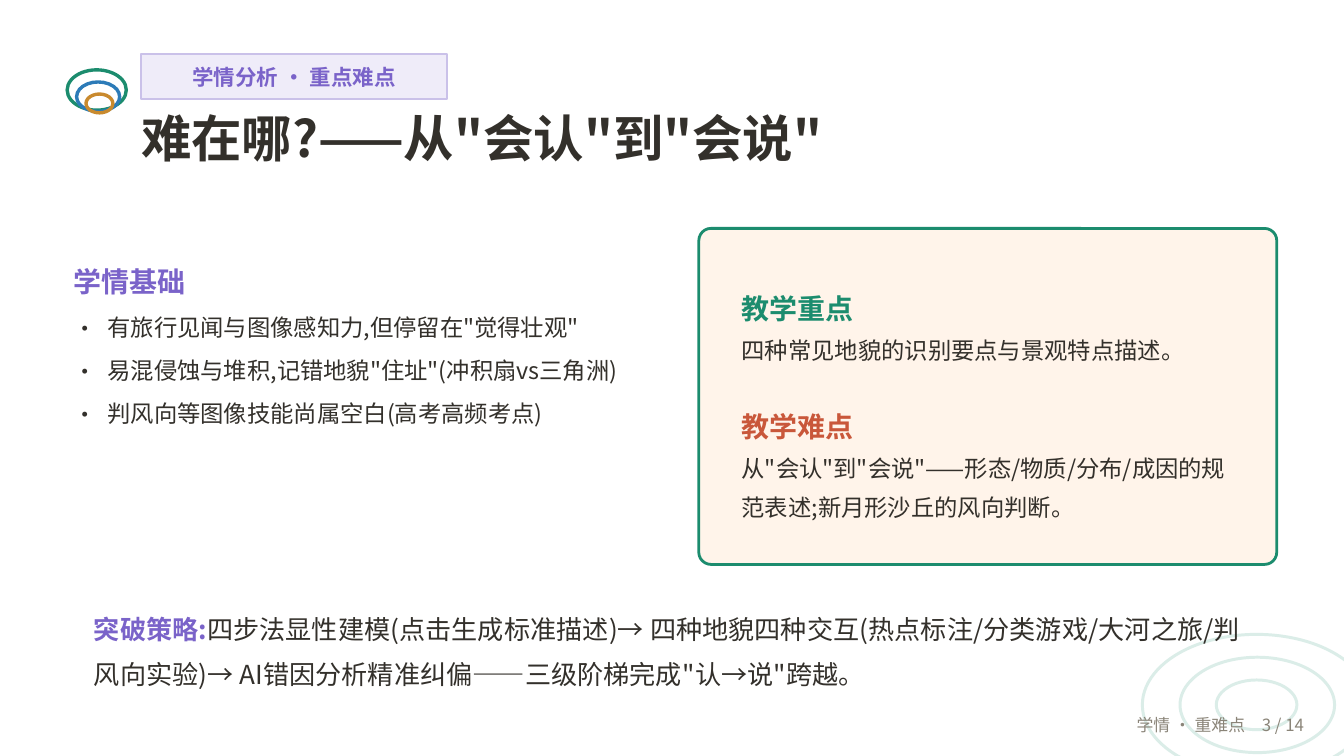
"""Build the lesson slide on learner analysis, key points and difficulties."""
from dataclasses import dataclass

from lxml import etree
from pptx import Presentation
from pptx import util as u
from pptx.dml.color import RGBColor
from pptx.enum import shapes, text
from pptx.oxml.ns import qn

PX = 4572


@dataclass(frozen=True)
class Theme:
    face: str = "Noto Sans CJK SC"
    ink: str = "33302B"
    purple: str = "7A63C9"
    green: str = "1C8C6E"
    red: str = "C9573A"
    blue: str = "2C7BB8"
    amber: str = "C98A2E"
    grey: str = "8A8478"
    mist: str = "DBEDE8"
    lilac: str = "EFECF9"
    lilac_edge: str = "CAC1E9"
    cream: str = "FFF4EA"
    title: float = 27
    heading: float = 15
    strategy: float = 14
    body: float = 12.5
    tag: float = 11.5
    footer: float = 9


theme = Theme()
deck = Presentation()
deck.slide_width, deck.slide_height = 2000 * PX, 1125 * PX
page = deck.slides.add_slide(deck.slide_layouts[6])


def add_figure(kind, place, edge, width, fill=None):
    figure = page.shapes.add_shape(kind, *(n * PX for n in place))
    figure.shadow.inherit = False
    figure.line.color.rgb = RGBColor.from_string(edge)
    figure.line.width = u.Pt(width)
    if fill:
        figure.fill.solid()
        figure.fill.fore_color.rgb = RGBColor.from_string(fill)
    else:
        figure.fill.background()
    return figure


def add_para(box, words, size, color, bold=False, leading=None, bullet=None):
    frame = box.text_frame
    para = frame.add_paragraph() if frame.text else frame.paragraphs[0]
    para.text = words
    if leading:
        para.line_spacing = u.Pt(leading)
    if bullet:
        props = para._p.get_or_add_pPr()
        props.set("marL", str(50 * PX))
        props.set("indent", str(-50 * PX))
        etree.SubElement(props, qn("a:buFont")).set("typeface", theme.face)
        etree.SubElement(props, qn("a:buChar")).set("char", bullet)
    para.font.name = theme.face
    para.font.size = u.Pt(size)
    para.font.bold = bold
    para.font.color.rgb = RGBColor.from_string(color)
    east_asian = etree.SubElement(para._p.pPr.find(qn("a:defRPr")), qn("a:ea"))
    east_asian.set("typeface", theme.face)
    return para


ripples = [(1700, 944, 340, 210), (1756, 978, 230, 142), (1810, 1012, 120, 74)]
for place in ripples:
    add_figure(shapes.MSO_SHAPE.OVAL, place, theme.mist, 1.6)

rings = [
    ((100, 104, 88, 60), theme.green),
    ((114, 122, 64, 44), theme.blue),
    ((128, 140, 40, 28), theme.amber),
]
for place, color in rings:
    add_figure(shapes.MSO_SHAPE.OVAL, place, color, 1.8)

tag = add_figure(shapes.MSO_SHAPE.RECTANGLE, (210, 80, 455, 68), theme.lilac_edge, 1, theme.lilac)
title = page.shapes.add_textbox(210 * PX, 160 * PX, 1680 * PX, 110 * PX)
basis = page.shapes.add_textbox(110 * PX, 380 * PX, 900 * PX, 360 * PX)
card = add_figure(shapes.MSO_SHAPE.ROUNDED_RECTANGLE, (1040, 340, 860, 500), theme.green, 1.5, theme.cream)
card.adjustments[0] = 0.036
focus = page.shapes.add_textbox(1084 * PX, 381 * PX, 784 * PX, 440 * PX)
strategy = page.shapes.add_textbox(120 * PX, 890 * PX, 1770 * PX, 140 * PX)
footer = page.shapes.add_textbox(1600 * PX, 1049 * PX, 360 * PX, 60 * PX)

for box in (tag, title, basis, focus, strategy, footer):
    box.text_frame.word_wrap = True
for box in (tag, title, basis):
    frame = box.text_frame
    frame.margin_left = frame.margin_right = frame.margin_top = frame.margin_bottom = 0
for box in (tag, focus, strategy, footer):
    box.text_frame.vertical_anchor = text.MSO_ANCHOR.MIDDLE

para = add_para(tag, "学情分析 · 重点难点", theme.tag, theme.purple, True)
para.alignment = text.PP_ALIGN.CENTER
add_para(title, '难在哪?——从"会认"到"会说"', theme.title, theme.ink, True)

add_para(basis, "学情基础", theme.heading, theme.purple, True, 23)
for words in (
    '有旅行见闻与图像感知力,但停留在"觉得壮观"',
    '易混侵蚀与堆积,记错地貌"住址"(冲积扇vs三角洲)',
    "判风向等图像技能尚属空白(高考高频考点)",
):
    add_para(basis, words, theme.body, theme.ink, leading=23, bullet="·")

add_para(focus, "教学重点", theme.heading, theme.green, True, 21)
add_para(focus, "四种常见地貌的识别要点与景观特点描述。", theme.body, theme.ink, leading=21)
para = add_para(focus, "教学难点", theme.heading, theme.red, True, 21)
para.space_before = u.Pt(21)
add_para(
    focus,
    '从"会认"到"会说"——形态/物质/分布/成因的规范表述;新月形沙丘的风向判断。',
    theme.body, theme.ink, leading=21,
)

para = add_para(strategy, "突破策略:", theme.strategy, theme.ink, leading=24)
lead = para.runs[0]
lead.font.bold = True
lead.font.color.rgb = RGBColor.from_string(theme.purple)
span = para.add_run()
span.text = (
    "四步法显性建模(点击生成标准描述)→ 四种地貌四种交互(热点标注/分类游戏/大河之旅/判风向实验)"
    '→ AI错因分析精准纠偏——三级阶梯完成"认→说"跨越。'
)

para = add_para(footer, "学情 · 重难点　3 / 14", theme.footer, theme.grey)
para.alignment = text.PP_ALIGN.RIGHT

deck.save("out.pptx")
